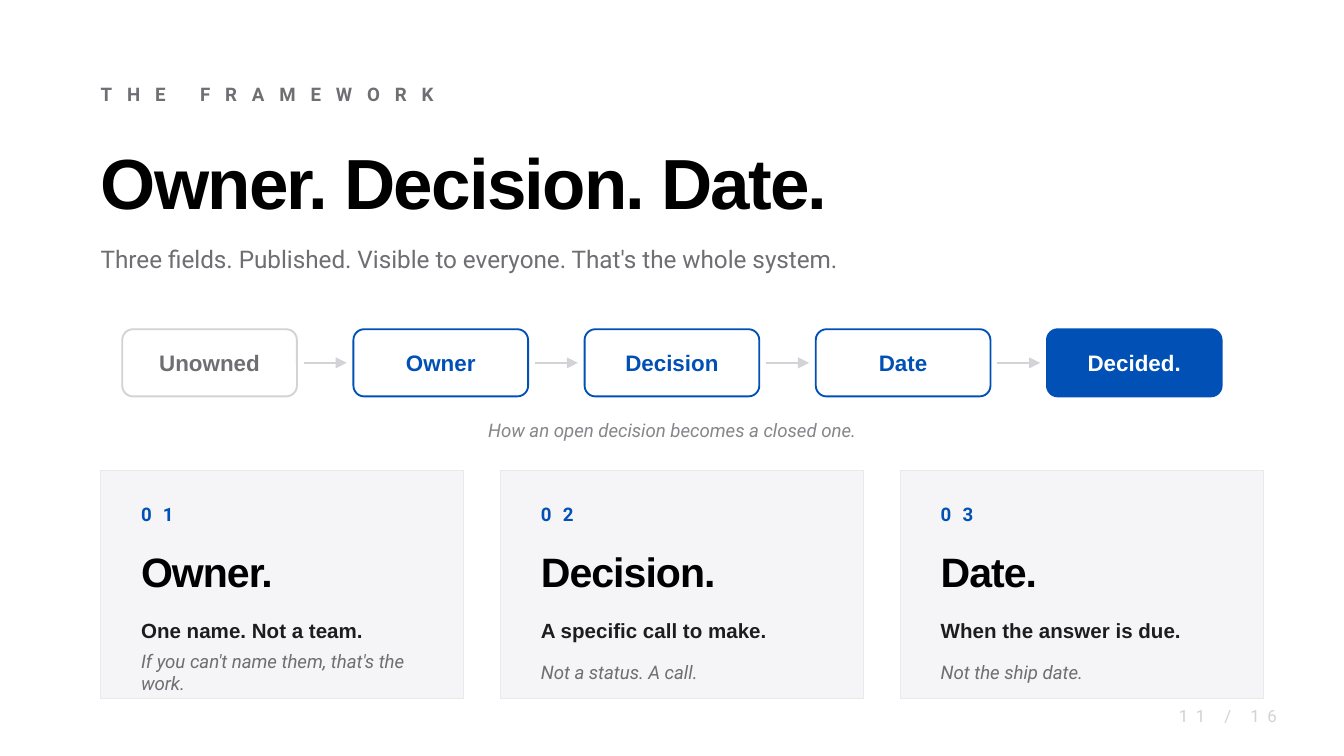
"""Build the framework slide: a heading, a flow of steps and three field cards."""
from dataclasses import dataclass

from lxml import etree
from pptx import Presentation
from pptx.dml.color import RGBColor
from pptx.enum.shapes import MSO_CONNECTOR, MSO_SHAPE
from pptx.enum.text import MSO_ANCHOR, MSO_AUTO_SIZE, PP_ALIGN
from pptx.oxml.ns import qn
from pptx.util import Inches, Pt

STRAIGHT = MSO_CONNECTOR.STRAIGHT
RECTANGLE, ROUNDED = MSO_SHAPE.RECTANGLE, MSO_SHAPE.ROUNDED_RECTANGLE
MIDDLE, NO_FIT = MSO_ANCHOR.MIDDLE, MSO_AUTO_SIZE.NONE
LEFT, CENTER, RIGHT = PP_ALIGN.LEFT, PP_ALIGN.CENTER, PP_ALIGN.RIGHT
COLUMNS, ROWS, UNIT = 100, 56.25, 0.1
TITLE_ONLY = 5


@dataclass(frozen=True)
class TextStyle:
    """Type size, font, colour and spacing of one kind of text."""
    size: float
    name: str
    color: str
    bold: bool = False
    italic: bool = False
    spacing: float = 0
    align: PP_ALIGN = LEFT


class Theme:
    """Colours, fonts and text styles of the slide."""
    blue, white, gray, pale = "0050B5", "FFFFFF", "6E6E73", "D2D2D7"
    card, card_edge = "F5F5F7", "E8E8ED"
    display, body = "Arial", "Roboto"
    kicker = TextStyle(10, body, gray, bold=True, spacing=8)
    title = TextStyle(38, display, "000000", bold=True, spacing=-1)
    subtitle = TextStyle(13, body, gray)
    caption = TextStyle(10, body, "86868B", italic=True, align=CENTER)
    number = TextStyle(10, body, blue, bold=True, spacing=6)
    field = TextStyle(22, display, "000000", bold=True, spacing=-0.5)
    rule = TextStyle(11, display, "1D1D1F", bold=True)
    note = TextStyle(10, body, gray, italic=True)
    folio = TextStyle(9, body, pale, spacing=4, align=RIGHT)

    @staticmethod
    def step(color):
        """Return the label style of a step in the given colour."""
        return TextStyle(12, Theme.display, color, bold=True, align=CENTER)


@dataclass(frozen=True)
class Box:
    """An area in grid columns and rows."""
    left: float
    top: float
    width: float
    height: float

    def inner(self, left, top, width, height):
        """Return an area placed relative to this one."""
        return Box(self.left + left, self.top + top, width, height)

    def lengths(self):
        """Return the area as slide lengths."""
        return [Inches(value * UNIT) for value in (self.left, self.top, self.width, self.height)]


def write(shape, text, style):
    """Set one line of styled text in a shape."""
    frame = shape.text_frame
    settings = {"word_wrap": True, "auto_size": NO_FIT, "vertical_anchor": MIDDLE,
                "margin_left": 0, "margin_top": 0, "margin_right": 0, "margin_bottom": 0}
    for key, value in settings.items():
        setattr(frame, key, value)
    para = frame.paragraphs[0]
    para.alignment = style.align
    span = para.add_run()
    span.text = text
    formats = {"size": Pt(style.size), "name": style.name,
               "bold": style.bold, "italic": style.italic}
    for key, value in formats.items():
        setattr(span.font, key, value)
    span.font.color.rgb = RGBColor.from_string(style.color)
    if style.spacing:
        span.font._element.set("spc", str(int(style.spacing * 100)))


def add_text(page, box, text, style):
    """Add a text box."""
    write(page.shapes.add_textbox(*box.lengths()), text, style)


def add_panel(page, kind, box, fill, edge, weight):
    """Add a filled and outlined shape."""
    panel = page.shapes.add_shape(kind, *box.lengths())
    panel.shadow.inherit = False
    panel.fill.solid()
    panel.fill.fore_color.rgb = RGBColor.from_string(fill)
    panel.line.color.rgb = RGBColor.from_string(edge)
    panel.line.width = Pt(weight)
    return panel


def add_arrow(page, box):
    """Add an arrow from the left to the right end of a flat box."""
    left, top, width, _ = box.lengths()
    arrow = page.shapes.add_connector(STRAIGHT, left, top, left + width, top)
    arrow.line.color.rgb = RGBColor.from_string(Theme.pale)
    arrow.line.width = Pt(0.75)
    etree.SubElement(arrow.line._get_or_add_ln(), qn("a:tailEnd"), type="triangle")
    etree.SubElement(arrow._element.spPr, qn("a:effectLst"))


def add_heading(page, box, kicker, title, subtitle):
    """Place the kicker, title and subtitle from the top down."""
    add_text(page, box.inner(0, 0, box.width, 3), kicker, Theme.kicker)
    heading = page.shapes.title
    area = box.inner(0, 4, box.width, 8).lengths()
    for key, value in zip(("left", "top", "width", "height"), area):
        setattr(heading, key, value)
    write(heading, title, Theme.title)
    add_text(page, box.inner(0, 12, box.width, 3.5), subtitle, Theme.subtitle)


def add_flow(page, box, steps, caption):
    """Place equal steps joined by arrows, with a caption below."""
    width, height, gap, clearance = 13, 5, 4.2, 0.5
    start = (box.width - len(steps) * width - (len(steps) - 1) * gap) / 2
    for index, (label, color, fill, edge) in enumerate(steps):
        left = start + index * (width + gap)
        if index:
            add_arrow(page, box.inner(left - gap + clearance, height / 2, gap - 2 * clearance, 0))
        step = add_panel(page, ROUNDED, box.inner(left, 0, width, height), fill, edge, 1)
        step.adjustments[0] = 0.16
        write(step, label, Theme.step(color))
    add_text(page, box.inner(0, 6, box.width, 3), caption, Theme.caption)


def add_card(page, box, number, field, rule, note):
    """Place one numbered field card."""
    add_panel(page, RECTANGLE, box, Theme.card, Theme.card_edge, 0.75)
    inset = 3
    width = box.width - 2 * inset
    lines = [(2, 2.5, number, Theme.number), (5, 5, field, Theme.field),
             (10.4, 3, rule, Theme.rule), (13.6, 2.8, note, Theme.note)]
    for top, height, text, style in lines:
        add_text(page, box.inner(inset, top, width, height), text, style)


def add_cards(page, box, cards):
    """Spread the cards evenly across the box."""
    width = 27
    pitch = (box.width - width) / (len(cards) - 1)
    for index, card in enumerate(cards):
        area = box.inner(index * pitch, 0, width, box.height)
        add_card(page, area, f"{index + 1:02}", *card)


def main():
    """Build and save the deck."""
    deck = Presentation()
    deck.slide_width, deck.slide_height = Inches(COLUMNS * UNIT), Inches(ROWS * UNIT)
    page = deck.slides.add_slide(deck.slide_layouts[TITLE_ONLY])
    add_heading(page, Box(7.5, 5.5, 85, 15.5), "THE FRAMEWORK", "Owner. Decision. Date.",
                "Three fields. Published. Visible to everyone. That's the whole system.")
    steps = [("Unowned", Theme.gray, Theme.white, Theme.pale)]
    steps += [(label, Theme.blue, Theme.white, Theme.blue)
              for label in ("Owner", "Decision", "Date")]
    steps.append(("Decided.", Theme.white, Theme.blue, Theme.blue))
    add_flow(page, Box(7.5, 24.5, 85, 9), steps, "How an open decision becomes a closed one.")
    add_cards(page, Box(7.5, 35, 86.5, 17), [
        ("Owner.", "One name. Not a team.", "If you can't name them, that's the work."),
        ("Decision.", "A specific call to make.", "Not a status. A call."),
        ("Date.", "When the answer is due.", "Not the ship date."),
    ])
    add_text(page, Box(85, 52, 10, 2.5), "11 / 16", Theme.folio)
    deck.save("out.pptx")


if __name__ == "__main__":
    main()
